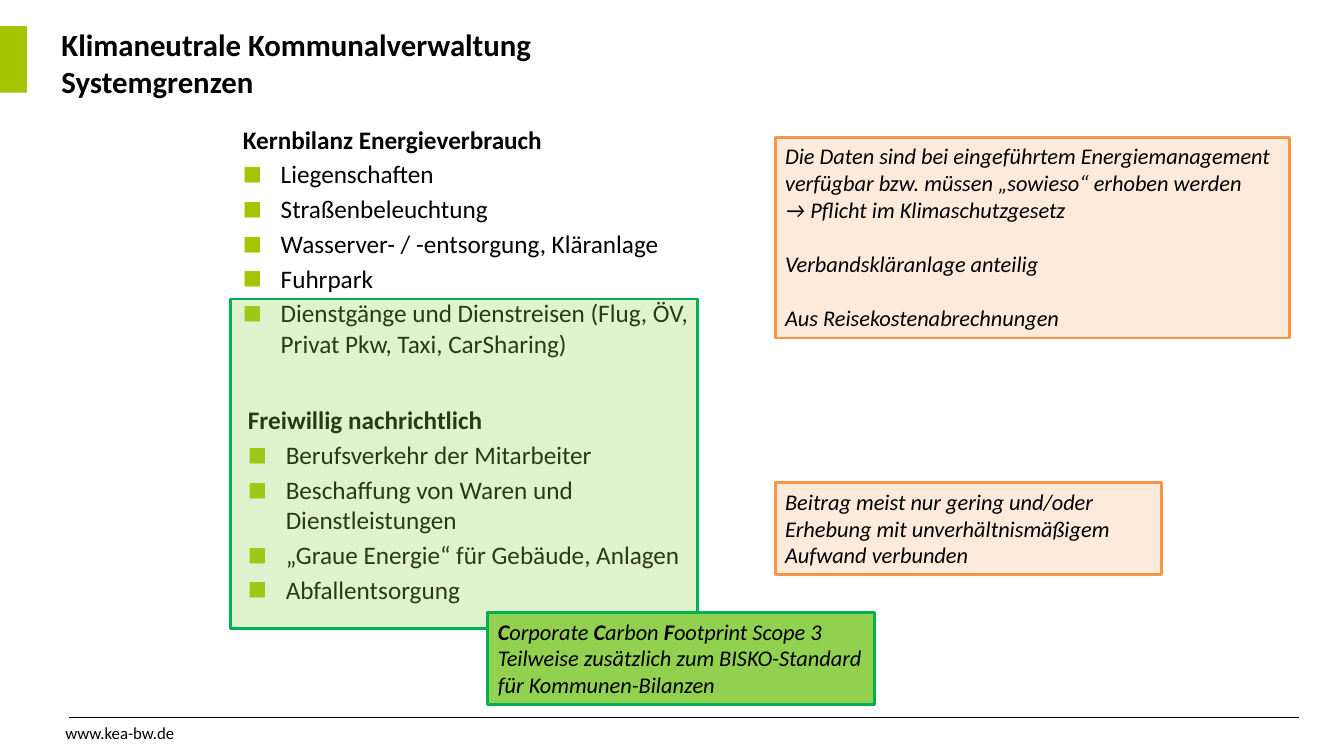
from dataclasses import dataclass

from lxml import etree
from pptx import Presentation
from pptx import util as u
from pptx.dml import color
from pptx.enum import shapes, text
from pptx.oxml import ns

FONT = "Calibri"
COLORS = {
    "black": "000000",
    "accent": "A4C400",
    "peach": "FDEADA",
    "orange": "F79646",
    "light_green": "92D050",
    "green": "00B050",
}
LIST_INDENT = 27
LIST_GAP = 3.2
NOTE_GAP = 19.5


@dataclass(frozen=True)
class Area:
    left: float
    top: float
    width: float
    height: float


@dataclass(frozen=True)
class Run:
    text: str
    bold: bool = False


@dataclass(frozen=True)
class Line:
    runs: tuple[Run, ...]
    space_before: float = 0


@dataclass(frozen=True)
class BulletList:
    area: Area
    heading: str
    items: tuple[str, ...]


@dataclass(frozen=True)
class Box:
    area: Area
    fill: str
    outline: str | None = None
    lines: tuple[Line, ...] = ()
    opacity: int = 100


TITLE_AREA = Area(36.72, 15.12, 504, 67.68)
FOOTER_AREA = Area(39.6, 512.64, 303.84, 23.76)
MARKER = Box(Area(0, 18.72, 19.2, 47.5), "accent")

LISTS = (
    BulletList(
        Area(166.32, 85, 333.5, 185),
        "Kernbilanz Energieverbrauch",
        (
            "Liegenschaften",
            "Straßenbeleuchtung",
            "Wasserver- / -entsorgung, Kläranlage",
            "Fuhrpark",
            "Dienstgänge und Dienstreisen (Flug, ÖV, Privat Pkw, Taxi, CarSharing)",
        ),
    ),
    BulletList(
        Area(169.92, 285.5, 333.5, 185),
        "Freiwillig nachrichtlich",
        (
            "Berufsverkehr der Mitarbeiter",
            "Beschaffung von Waren und Dienstleistungen",
            "„Graue Energie“ für Gebäude, Anlagen",
            "Abfallentsorgung",
        ),
    ),
)

BOXES = (
    Box(
        Area(553.68, 98, 367.5, 143.5), "peach", "orange",
        (
            Line((Run("Die Daten sind bei eingeführtem Energiemanagement "
                      "verfügbar bzw. müssen „sowieso“ erhoben werden"),)),
            Line((Run("→ Pflicht im Klimaschutzgesetz"),)),
            Line((Run("Verbandskläranlage anteilig"),), NOTE_GAP),
            Line((Run("Aus Reisekostenabrechnungen"),), NOTE_GAP),
        ),
    ),
    Box(
        Area(553.68, 344.88, 276, 65.5), "peach", "orange",
        (Line((Run("Beitrag meist nur gering und/oder Erhebung mit "
                   "unverhältnismäßigem Aufwand verbunden"),)),),
    ),
    Box(Area(164.6, 213.6, 333.5, 235.4), "light_green", "green", opacity=28),
    Box(
        Area(348.48, 437.6, 276, 65.5), "light_green", "green",
        (
            Line((Run("C", True), Run("orporate "), Run("C", True),
                  Run("arbon "), Run("F", True), Run("ootprint Scope 3"))),
            Line((Run("Teilweise zusätzlich zum BISKO-Standard für Kommunen-Bilanzen"),)),
        ),
    ),
)


def rgb(name: str) -> color.RGBColor:
    return color.RGBColor.from_string(COLORS[name])


def place(shape, area: Area) -> None:
    shape.left, shape.top = u.Pt(area.left), u.Pt(area.top)
    shape.width, shape.height = u.Pt(area.width), u.Pt(area.height)


def prepare_frame(shape):
    frame = shape.text_frame
    frame.word_wrap = True
    frame.auto_size = text.MSO_AUTO_SIZE.NONE
    frame.vertical_anchor = text.MSO_ANCHOR.TOP
    return frame


def add_run(paragraph, content: str, size: float, bold: bool = False, italic: bool = False) -> None:
    run = paragraph.add_run()
    run.text = content
    font = run.font
    font.name, font.size = FONT, u.Pt(size)
    font.bold, font.italic = bold, italic
    font.color.rgb = rgb("black")


def set_bullet(paragraph, bulleted: bool) -> None:
    properties = paragraph._p.get_or_add_pPr()
    indent = u.Pt(LIST_INDENT) if bulleted else 0
    properties.set("marL", str(indent))
    properties.set("indent", str(-indent))
    if not bulleted:
        etree.SubElement(properties, ns.qn("a:buNone"))
        return
    bullet_color = etree.SubElement(properties, ns.qn("a:buClr"))
    etree.SubElement(bullet_color, ns.qn("a:srgbClr"), val=COLORS["accent"])
    etree.SubElement(properties, ns.qn("a:buSzPct"), val="80000")
    etree.SubElement(properties, ns.qn("a:buFont"), typeface=FONT)
    etree.SubElement(properties, ns.qn("a:buChar"), char="■")


def fill_title(placeholder) -> None:
    place(placeholder, TITLE_AREA)
    paragraph = prepare_frame(placeholder).paragraphs[0]
    paragraph.alignment = text.PP_ALIGN.LEFT
    add_run(paragraph, "Klimaneutrale Kommunalverwaltung", 22, bold=True)
    paragraph.add_line_break()
    add_run(paragraph, "Systemgrenzen", 22, bold=True)


def fill_list(placeholder, bullet_list: BulletList) -> None:
    place(placeholder, bullet_list.area)
    frame = prepare_frame(placeholder)
    for index, entry in enumerate((bullet_list.heading, *bullet_list.items)):
        paragraph = frame.add_paragraph() if index else frame.paragraphs[0]
        paragraph.space_before = u.Pt(LIST_GAP if index else 0)
        set_bullet(paragraph, index > 0)
        add_run(paragraph, entry, 18, bold=index == 0)


def add_box(slide, box: Box) -> None:
    shape = slide.shapes.add_shape(shapes.MSO_SHAPE.RECTANGLE, 0, 0, 0, 0)
    place(shape, box.area)
    shape.shadow.inherit = False
    shape.fill.solid()
    shape.fill.fore_color.rgb = rgb(box.fill)
    if box.opacity < 100:
        fill_color = shape._element.spPr.find(".//" + ns.qn("a:srgbClr"))
        etree.SubElement(fill_color, ns.qn("a:alpha"), val=str(box.opacity * 1000))
    if box.outline:
        shape.line.color.rgb = rgb(box.outline)
        shape.line.width = u.Pt(2)
    else:
        shape.line.fill.background()
    frame = prepare_frame(shape)
    for index, line in enumerate(box.lines):
        paragraph = frame.add_paragraph() if index else frame.paragraphs[0]
        paragraph.alignment = text.PP_ALIGN.LEFT
        paragraph.space_before = u.Pt(line.space_before)
        for run in line.runs:
            add_run(paragraph, run.text, 16, run.bold, italic=True)


def add_footer(slide) -> None:
    rule = slide.shapes.add_connector(
        shapes.MSO_CONNECTOR.STRAIGHT, u.Pt(928), u.Pt(512.64), u.Pt(49), u.Pt(512.64))
    rule.line.color.rgb = rgb("black")
    rule.line.width = u.Pt(0.75)
    etree.SubElement(rule._element.spPr, ns.qn("a:effectLst"))
    footer = slide.shapes.add_textbox(0, 0, 0, 0)
    place(footer, FOOTER_AREA)
    add_run(prepare_frame(footer).paragraphs[0], "www.kea-bw.de", 12)


def main() -> None:
    presentation = Presentation()
    presentation.slide_width, presentation.slide_height = u.Pt(960), u.Pt(540)
    slide = presentation.slides.add_slide(presentation.slide_layouts.get_by_name("Two Content"))
    title, *bodies = slide.placeholders
    fill_title(title)
    for body, bullet_list in zip(bodies, LISTS):
        fill_list(body, bullet_list)
    add_footer(slide)
    for box in (MARKER, *BOXES):
        add_box(slide, box)
    presentation.save("out.pptx")


if __name__ == "__main__":
    main()
